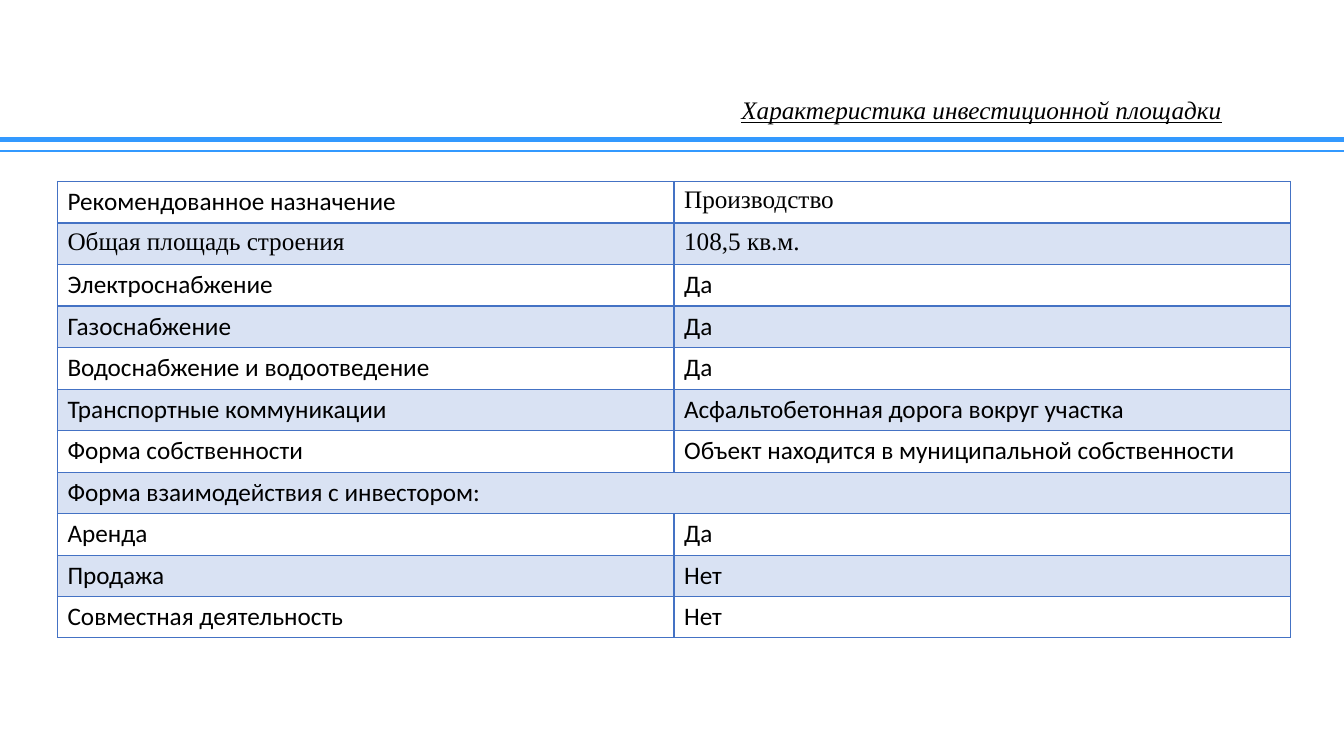
"""Builds a slide with a table describing an investment site."""
import lxml.etree
import pptx
import pptx.dml.color
import pptx.enum.shapes
import pptx.enum.text
import pptx.oxml.ns
import pptx.util

Inches = pptx.util.Inches
Pt = pptx.util.Pt
BLACK = pptx.dml.color.RGBColor(0x00, 0x00, 0x00)
RULE_BLUE = pptx.dml.color.RGBColor(0x33, 0x99, 0xFF)
TABLE_BLUE = pptx.dml.color.RGBColor(0x44, 0x72, 0xC4)
SERIF = "Times New Roman"
SANS = "Calibri"
ROWS = [
    ("Рекомендованное назначение", "Производство"),
    ("Общая площадь строения", "108,5 кв.м."),
    ("Электроснабжение", "Да"),
    ("Газоснабжение", "Да"),
    ("Водоснабжение и водоотведение", "Да"),
    ("Транспортные коммуникации", "Асфальтобетонная дорога вокруг участка"),
    ("Форма собственности", "Объект находится в муниципальной собственности"),
    ("Форма взаимодействия с инвестором:", ""),
    ("Аренда", "Да"),
    ("Продажа", "Нет"),
    ("Совместная деятельность", "Нет"),
]
SERIF_TEXTS = ("Производство", "Общая площадь строения", "108,5 кв.м.")
SPANNING_ROW = 7
TABLE_HEIGHT = 4.51
SHORT_ROW = 0.4


def write_text(para, text, font=SANS, italic=False, underline=False):
    span = para.add_run()
    span.text = text
    span.font.name = font
    span.font.size = Pt(18)
    span.font.italic = italic
    span.font.underline = underline
    span.font.color.rgb = BLACK


def add_child(parent, tag, **attributes):
    return lxml.etree.SubElement(parent, pptx.oxml.ns.qn(tag), **attributes)


deck = pptx.Presentation()
deck.slide_width = Inches(13.33)
deck.slide_height = Inches(7.5)
page = deck.slides.add_slide(deck.slide_layouts[5])

for top, weight in ((1.38, 3.5), (1.5, 1.5)):
    rule = page.shapes.add_connector(
        pptx.enum.shapes.MSO_CONNECTOR.STRAIGHT,
        0, Inches(top), deck.slide_width, Inches(top))
    rule.line.color.rgb = RULE_BLUE
    rule.line.width = Pt(weight)
    add_child(rule._element.spPr, "a:effectLst")

title = page.shapes.title
title.left, title.top = Inches(6.67), Inches(0.97)
title.width, title.height = Inches(6.13), Inches(0.27)
title.text_frame.word_wrap = True
title.text_frame.vertical_anchor = pptx.enum.text.MSO_ANCHOR.MIDDLE
heading = title.text_frame.paragraphs[0]
heading.alignment = pptx.enum.text.PP_ALIGN.CENTER
heading.line_spacing = 0.9
write_text(heading, "Характеристика инвестиционной площадки",
           font=SERIF, italic=True, underline=True)

table = page.shapes.add_table(
    len(ROWS), 2, Inches(0.57), Inches(1.8),
    Inches(12.23), Inches(TABLE_HEIGHT)).table
table.first_row = False
table.horz_banding = False
tall_row = (TABLE_HEIGHT - 2 * SHORT_ROW) / (len(ROWS) - 2)

for row_index, texts in enumerate(ROWS):
    is_short = row_index >= len(ROWS) - 2
    table.rows[row_index].height = Inches(SHORT_ROW if is_short else tall_row)
    for column_index, text in enumerate(texts):
        cell = table.cell(row_index, column_index)
        if text:
            write_text(cell.text_frame.paragraphs[0], text,
                       font=SERIF if text in SERIF_TEXTS else SANS)
        properties = cell._tc.get_or_add_tcPr()
        for side in ("L", "R", "T", "B"):
            weight = 2 if row_index == 0 and side == "B" else 1
            border = add_child(properties, f"a:ln{side}", w=str(Pt(weight)))
            border_fill = add_child(border, "a:solidFill")
            add_child(border_fill, "a:srgbClr", val=str(TABLE_BLUE))
        if row_index % 2:
            cell.fill.solid()
            cell.fill.fore_color.rgb = TABLE_BLUE
            shade = properties.find(pptx.oxml.ns.qn("a:solidFill"))[0]
            add_child(shade, "a:alpha", val="20000")
        else:
            cell.fill.background()

table.cell(SPANNING_ROW, 0).merge(table.cell(SPANNING_ROW, 1))

deck.save("out.pptx")
